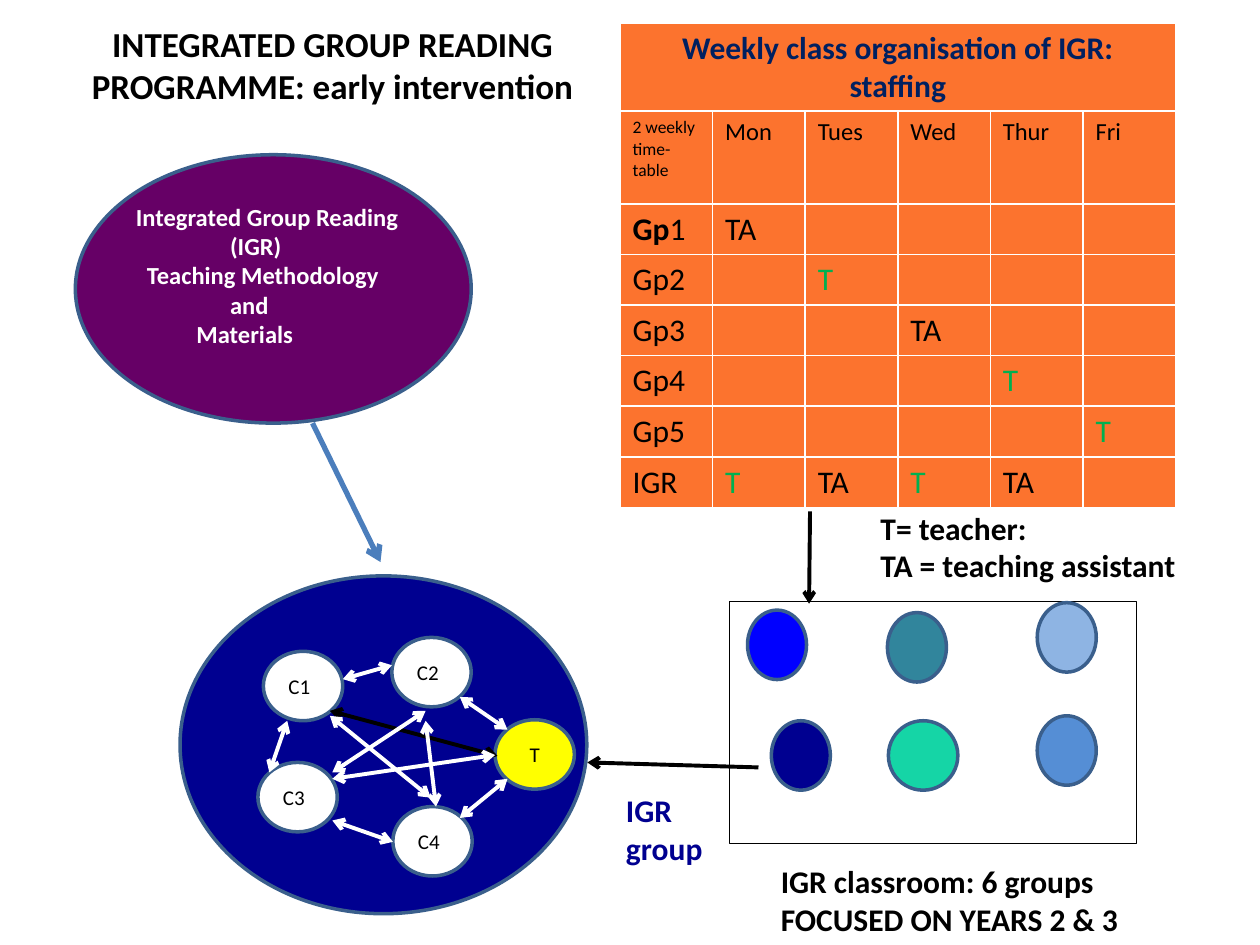
from lxml.etree import SubElement
from pptx import Presentation
from pptx.dml.color import RGBColor
from pptx.enum.shapes import MSO_CONNECTOR, MSO_SHAPE
from pptx.enum.text import MSO_ANCHOR, PP_ALIGN
from pptx.oxml.ns import qn
from pptx.util import Cm, Pt

FONT = "Calibri"
BLACK = RGBColor(0x00, 0x00, 0x00)
WHITE = RGBColor(0xFF, 0xFF, 0xFF)
NAVY = RGBColor(0x00, 0x00, 0x90)
DARK_BLUE = RGBColor(0x00, 0x20, 0x60)
OUTLINE = RGBColor(0x3A, 0x5F, 0x8C)
ARROW_BLUE = RGBColor(0x4B, 0x7E, 0xBC)
PURPLE = RGBColor(0x66, 0x00, 0x66)
YELLOW = RGBColor(0xFF, 0xFF, 0x00)
ORANGE = RGBColor(0xFC, 0x73, 0x2E)
GREEN = RGBColor(0x00, 0xB0, 0x50)
BLUE = RGBColor(0x00, 0x00, 0xFF)
TEAL = RGBColor(0x31, 0x85, 0x9C)
MID_BLUE = RGBColor(0x55, 0x8E, 0xD5)
LIGHT_BLUE = RGBColor(0x8E, 0xB4, 0xE3)
MINT = RGBColor(0x15, 0xD5, 0xA6)


def style_text(tf, size, color, bold=False, align=None):
    for p in tf.paragraphs:
        if align is not None:
            p.alignment = align
        for r in p.runs:
            r.font.name, r.font.size, r.font.bold = FONT, Pt(size), bold
            r.font.color.rgb = color


def add_label(s, x, y, w, h, text, size=18, color=BLACK):
    tf = s.shapes.add_textbox(Cm(x), Cm(y), Cm(w), Cm(h)).text_frame
    tf.word_wrap = True
    tf.text = text
    style_text(tf, size, color, bold=True)
    return tf


def add_shape(s, kind, x, y, w, h, fill=None, line=OUTLINE, width=2):
    sp = s.shapes.add_shape(kind, Cm(x), Cm(y), Cm(w), Cm(h))
    sp.shadow.inherit = False
    if fill is None:
        sp.fill.background()
    else:
        sp.fill.solid()
        sp.fill.fore_color.rgb = fill
    sp.line.color.rgb = line
    sp.line.width = Pt(width)
    return sp


def add_arrow(s, x1, y1, x2, y2, color=BLACK, width=2.25, both=False):
    c = s.shapes.add_connector(MSO_CONNECTOR.STRAIGHT, Cm(x1), Cm(y1), Cm(x2), Cm(y2))
    c.line.color.rgb = color
    c.line.width = Pt(width)
    ln = c.line._get_or_add_ln()
    for end in ("a:headEnd", "a:tailEnd") if both else ("a:tailEnd",):
        SubElement(ln, qn(end), type="arrow")
    SubElement(c._element.spPr, qn("a:effectLst"))


def add_title(s, x, y, w, h):
    title = s.shapes.title
    title.left, title.top, title.width, title.height = Cm(x), Cm(y), Cm(w), Cm(h)
    tf = title.text_frame
    tf.text = "INTEGRATED GROUP READING PROGRAMME: early intervention"
    tf.vertical_anchor = MSO_ANCHOR.TOP
    style_text(tf, 20, BLACK, bold=True, align=PP_ALIGN.CENTER)


def add_methodology(s, x, y, w, h):
    add_shape(s, MSO_SHAPE.OVAL, x, y, w, h, PURPLE)
    lines = [("Integrated Group Reading", 0), ("(IGR)", 1.9), ("Teaching Methodology", 0.22),
             ("and", 1.9), ("Materials", 1.22)]
    tf = add_label(s, x + 0.97, y + 0.82, 6.5, 3.25,
                   "\n".join(text for text, _ in lines), 14, WHITE)
    for p, (_, indent) in zip(tf.paragraphs, lines):
        p._p.get_or_add_pPr().set("marL", str(Cm(indent)))


def add_reading_group(s, x, y, w, h):
    add_shape(s, MSO_SHAPE.OVAL, x, y, w, h, NAVY)
    # Children and teacher
    members = [("C1", 1.68, 1.52), ("C2", 4.27, 1.24), ("T", 6.35, 2.9),
               ("C4", 4.29, 4.65), ("C3", 1.57, 3.76)]
    for name, dx, dy in members:
        teacher = name == "T"
        sp = add_shape(s, MSO_SHAPE.OVAL, x + dx, y + dy, 1.6, 1.4, YELLOW if teacher else WHITE)
        tf = sp.text_frame
        tf.margin_left = tf.margin_top = tf.margin_bottom = 0
        tf.margin_right = 0 if teacher else Cm(0.15)
        tf.vertical_anchor = MSO_ANCHOR.MIDDLE
        tf.text = name
        style_text(tf, 12, BLACK, align=PP_ALIGN.CENTER)
    # Two-way exchanges
    exchanges = [
        (3.28, 2.08, 4.27, 1.8, WHITE), (1.8, 3.96, 2.16, 2.92, WHITE),
        (3.07, 4.93, 4.29, 5.36, WHITE), (5.64, 4.88, 6.6, 4.09, WHITE),
        (5.64, 2.44, 6.6, 3.1, WHITE), (3.02, 2.72, 6.4, 3.63, BLACK),
        (3.07, 4.09, 6.35, 3.61, WHITE), (3.07, 3.96, 4.95, 2.72, WHITE),
        (4.95, 2.92, 5.16, 4.65, WHITE), (3.02, 2.82, 5.05, 4.47, WHITE),
    ]
    for x1, y1, x2, y2, color in exchanges:
        add_arrow(s, x + x1, y + y1, x + x2, y + y2, color, both=True)


def add_classroom(s, x, y, w, h):
    add_shape(s, MSO_SHAPE.RECTANGLE, x, y, w, h, line=BLACK, width=0.75)
    groups = [(0.36, 0.18, 1.19, BLUE), (3.18, 0.23, 1.19, TEAL), (6.2, 0.03, 1.19, LIGHT_BLUE),
              (0.84, 2.41, 1.19, NAVY), (3.2, 2.41, 1.4, MINT), (6.2, 2.31, 1.19, MID_BLUE)]
    for dx, dy, width, fill in groups:
        add_shape(s, MSO_SHAPE.OVAL, x + dx, y + dy, width, 1.4, fill)


def add_timetable(s, x, y, w):
    rows = [
        ["Weekly class organisation of IGR: staffing", "", "", "", "", ""],
        ["2 weekly time-table", "Mon", "Tues", "Wed", "Thur", "Fri"],
        ["Gp1", "TA", "", "", "", ""],
        ["Gp2", "", "T", "", "", ""],
        ["Gp3", "", "", "TA", "", ""],
        ["Gp4", "", "", "", "T", ""],
        ["Gp5", "", "", "", "", "T"],
        ["IGR", "T", "TA", "T", "TA", ""],
    ]
    heights = [1.75, 1.87] + [1.02] * 6
    table = s.shapes.add_table(len(rows), 6, Cm(x), Cm(y), Cm(w), Cm(sum(heights))).table
    table.horz_banding = False
    for row, height in zip(table.rows, heights):
        row.height = Cm(height)
    table.cell(0, 0).merge(table.cell(0, 5))
    for i, row in enumerate(rows):
        for j, text in enumerate(row):
            cell = table.cell(i, j)
            cell.fill.solid()
            cell.fill.fore_color.rgb = ORANGE
            if not text:
                continue
            tf = cell.text_frame
            tf.text = text
            if i == 0:
                style_text(tf, 18, DARK_BLUE, bold=True, align=PP_ALIGN.CENTER)
            elif i == 1:
                style_text(tf, 14 if j else 10, BLACK)
            else:
                style_text(tf, 18, GREEN if text == "T" else BLACK)
    # First group: only the prefix is bold
    p = table.cell(2, 0).text_frame.paragraphs[0]
    p.runs[0].text = "Gp"
    p.add_run().text = "1"
    style_text(table.cell(2, 0).text_frame, 18, BLACK)
    p.runs[0].font.bold = True


def main():
    prs = Presentation()
    prs.slide_width, prs.slide_height = Cm(25.4), Cm(19.05)
    s = prs.slides.add_slide(prs.slide_layouts[5])

    # Regions
    add_title(s, 0.71, 0.33, 11.99, 1.96)
    add_classroom(s, 14.71, 12.12, 8.2, 4.88)
    add_reading_group(s, 3.63, 11.61, 8.2, 6.81)
    add_methodology(s, 1.52, 3.12, 7.98, 5.41)
    add_timetable(s, 12.5, 0.46, 11.2)

    # Captions
    add_label(s, 12.37, 15.82, 2.39, 1.8, "IGR\ngroup", color=NAVY)
    add_label(s, 15.49, 17.25, 7.54, 1.8, "IGR classroom: 6 groups\nFOCUSED ON YEARS 2 & 3")
    add_label(s, 17.5, 10.13, 7.39, 1.8, "T= teacher:\nTA = teaching assistant")

    # Links between regions
    add_arrow(s, 6.3, 8.53, 7.67, 11.33, ARROW_BLUE, 3)
    add_arrow(s, 16.33, 10.31, 16.31, 12.17)
    add_arrow(s, 15.29, 15.47, 11.84, 15.37)

    prs.save("out.pptx")


if __name__ == "__main__":
    main()
